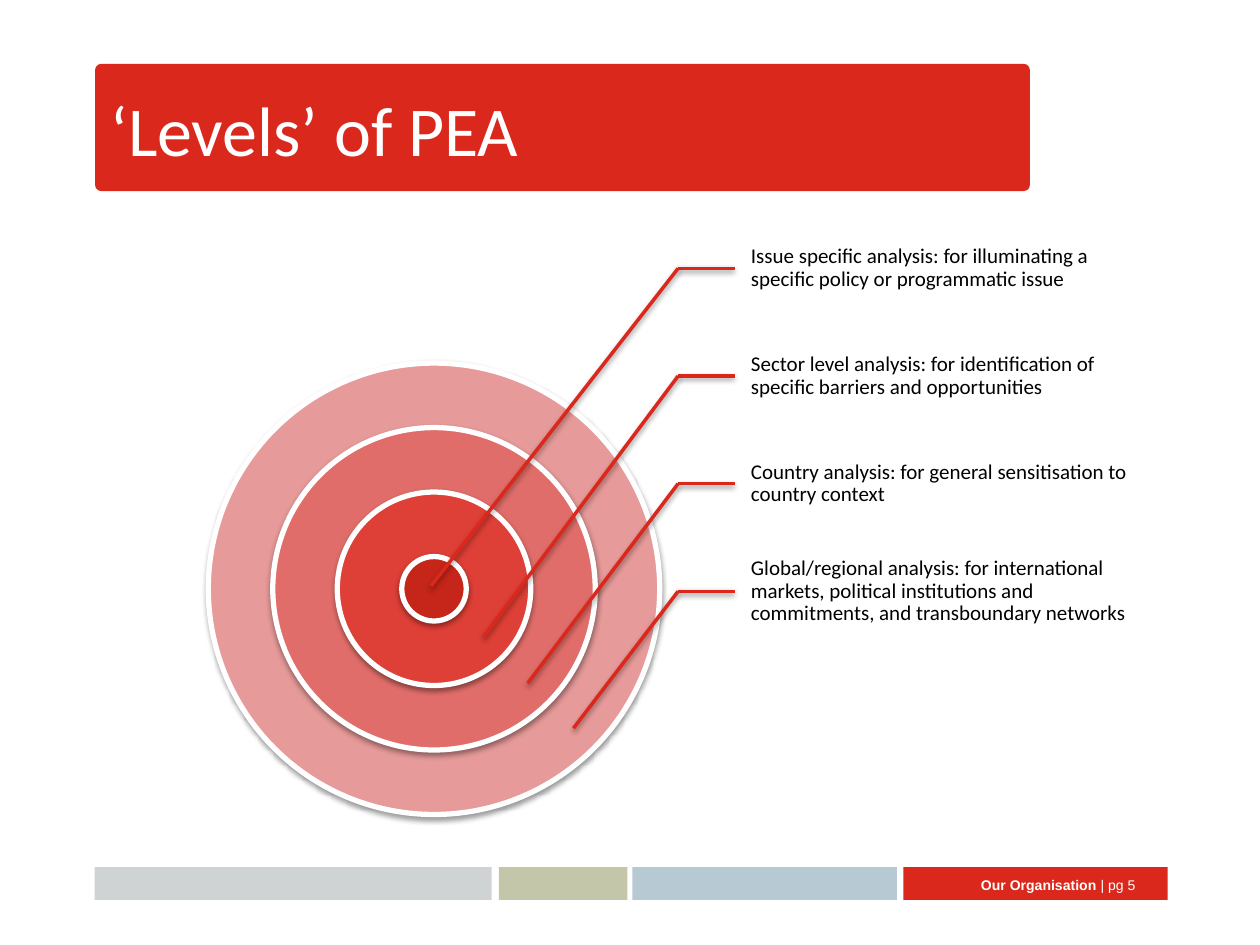
from lxml import etree
from pptx import Presentation
from pptx.dml.color import RGBColor
from pptx.enum.shapes import MSO_CONNECTOR, MSO_SHAPE
from pptx.enum.text import MSO_ANCHOR, PP_ALIGN
from pptx.oxml import parse_xml
from pptx.oxml.ns import nsdecls
from pptx.util import Cm, Pt

ROUNDED, OVAL = MSO_SHAPE.ROUNDED_RECTANGLE, MSO_SHAPE.OVAL
STRAIGHT = MSO_CONNECTOR.STRAIGHT
MIDDLE, RIGHT = MSO_ANCHOR.MIDDLE, PP_ALIGN.RIGHT

RED = RGBColor(0xDA, 0x29, 0x1C)
WHITE = RGBColor(0xFF, 0xFF, 0xFF)
BLACK = RGBColor(0x00, 0x00, 0x00)
GREY = RGBColor(0xD0, 0xD3, 0xD4)
OLIVE = RGBColor(0xC3, 0xC6, 0xA8)
BLUE = RGBColor(0xB7, 0xC9, 0xD3)
RING_COLORS = [RGBColor(0xE6, 0x9A, 0x99), RGBColor(0xE0, 0x6D, 0x69),
               RGBColor(0xDE, 0x3F, 0x36), RGBColor(0xC6, 0x25, 0x19)]

SHADOW = (f'<a:effectLst {nsdecls("a")}>'
          '<a:outerShdw blurRad="39400" dist="20300" dir="5400000" rotWithShape="0">'
          '<a:srgbClr val="000000"><a:alpha val="38000"/></a:srgbClr>'
          '</a:outerShdw></a:effectLst>')

prs = Presentation()
prs.slide_width, prs.slide_height = Cm(25.4), Cm(19.05)
slide = prs.slides.add_slide(prs.slide_layouts[6])
shapes = slide.shapes


def add_block(kind, left, top, width, height, color):
    block = shapes.add_shape(kind, Cm(left), Cm(top), Cm(width), Cm(height))
    block.shadow.inherit = False
    block.fill.solid()
    block.fill.fore_color.rgb = color
    block.line.fill.background()
    return block


def add_words(left, top, width, height, runs, font_name, size, color):
    frame = shapes.add_textbox(Cm(left), Cm(top), Cm(width), Cm(height)).text_frame
    frame.word_wrap = True
    frame.vertical_anchor = MIDDLE
    paragraph = frame.paragraphs[0]
    for words in runs:
        paragraph.add_run().text = words
    paragraph.font.name = font_name
    paragraph.font.size = Pt(size)
    paragraph.font.color.rgb = color
    return frame


# Title banner
banner = add_block(ROUNDED, 1.93, 1.3, 18.82, 2.54, RED)
banner.adjustments[0] = 0.045
banner.line.color.rgb = RED
banner.line.width = Pt(0.75)
add_words(1.98, 1.3, 18.75, 2.57, ["‘Levels’ of PEA"], "Calibri", 40, WHITE)

# Footer bar
for left, width, color in [(1.91, 8, GREY), (10.06, 2.59, OLIVE),
                           (12.75, 5.33, BLUE), (18.21, 5.33, RED)]:
    add_block(ROUNDED, left, 17.48, width, 0.66, color).adjustments[0] = 0
footer = add_words(19.18, 17.32, 3.96, 1.02, ["Our Organisation ", "| pg 5"],
                   "Arial", 8, WHITE).paragraphs[0]
footer.alignment = RIGHT
footer.runs[0].font.bold = True

# Concentric rings, outermost first
CENTER_X, CENTER_Y, CORE = 8.75, 11.87, 1.3
for steps, color in zip((7, 5, 3, 1), RING_COLORS):
    size = CORE * steps
    ring = add_block(OVAL, CENTER_X - size / 2, CENTER_Y - size / 2, size, size, color)
    ring.line.color.rgb = WHITE
    ring.line.width = Pt(3)
    properties = ring.element.spPr
    properties.replace(properties.find("{*}effectLst"), parse_xml(SHADOW))

# Level descriptions, each with a leader into its ring
FIRST_ROW, ROW_STEP = 5.41, 2.17
ELBOW_X, LEADER_END, LABEL_X = 13.67, 14.81, 14.91
levels = [
    ("Issue specific analysis: for illuminating a specific policy or programmatic issue",
     2.16, (8.69, 11.81)),
    ("Sector level analysis: for identification of specific barriers and opportunities",
     2.16, (9.75, 12.83)),
    ("Country analysis: for general sensitisation to country context",
     2.16, (10.64, 13.77)),
    ("Global/regional analysis: for international markets, political institutions and "
     "commitments, and transboundary networks", 2.82, (11.56, 14.68)),
]
for index, (description, height, target) in enumerate(levels):
    row_y = FIRST_ROW + index * ROW_STEP
    label = add_words(LABEL_X, row_y - height / 2, 8.23, height, [description],
                      "Calibri", 12, BLACK)
    label.margin_left = Cm(0.23)
    label.margin_top = label.margin_right = label.margin_bottom = Cm(0.05)
    label.paragraphs[0].line_spacing = 0.9

    for end_x, end_y in [(LEADER_END, row_y), target]:
        leader = shapes.add_connector(STRAIGHT, Cm(ELBOW_X), Cm(row_y), Cm(end_x), Cm(end_y))
        leader.line.color.rgb = RED
        leader.line.width = Pt(2)
        leader.element.spPr.append(etree.fromstring(SHADOW))

prs.save("out.pptx")
